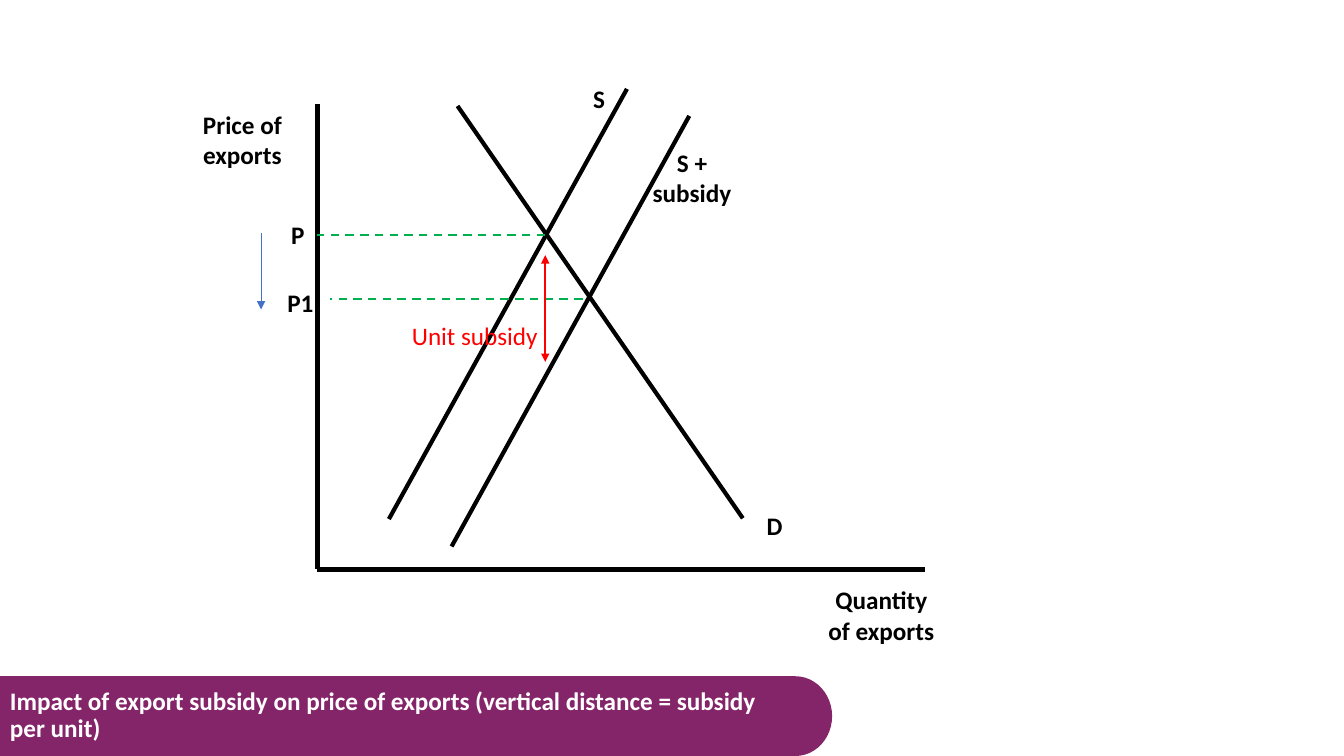
from lxml import etree
from pptx import Presentation
from pptx import util as u
from pptx.dml.color import RGBColor
from pptx.enum import dml, shapes, text
from pptx.oxml.ns import qn

BLACK = RGBColor(0x00, 0x00, 0x00)
WHITE = RGBColor(0xFF, 0xFF, 0xFF)
PURPLE = RGBColor(0x85, 0x25, 0x69)
GREEN = RGBColor(0x00, 0xB0, 0x50)
BLUE = RGBColor(0x44, 0x72, 0xC4)
RED = RGBColor(0xFF, 0x00, 0x00)

ORIGIN_X, ORIGIN_Y = 8, 14.35
BANNER_TOP, BANNER_HEIGHT = 17.04, 2.01
CENTER, LEFT = text.PP_ALIGN.CENTER, text.PP_ALIGN.LEFT


def add_line(page, start, end, color=BLACK, width=3, dashed=False, arrows=()):
    """Draw a straight line; arrows may hold "headEnd" and "tailEnd"."""
    points = [u.Cm(value) for value in (*start, *end)]
    line = page.shapes.add_connector(shapes.MSO_CONNECTOR.STRAIGHT, *points)
    line.line.color.rgb = color
    line.line.width = u.Pt(width)
    if dashed:
        line.line.dash_style = dml.MSO_LINE.DASH
    properties = line._element.spPr
    outline = properties.find(qn("a:ln"))
    for arrow in arrows:
        etree.SubElement(outline, qn(f"a:{arrow}"), type="triangle")
    etree.SubElement(properties, qn("a:effectLst"))


def add_label(page, words, left, top, width=3.18, height=1.02,
              color=BLACK, bold=True, align=CENTER):
    box = page.shapes.add_textbox(*map(u.Cm, (left, top, width, height)))
    box.text_frame.word_wrap = True
    para = box.text_frame.paragraphs[0]
    para.text = words
    para.alignment = align
    para.font.name = "Calibri"
    para.font.size = u.Pt(18)
    para.font.bold = bold
    para.font.color.rgb = color
    return box


def add_banner_part(page, kind, left, width):
    part = page.shapes.add_shape(
        kind, *map(u.Cm, (left, BANNER_TOP, width, BANNER_HEIGHT)))
    part.shadow.inherit = False
    part.fill.solid()
    part.fill.fore_color.rgb = PURPLE
    part.line.fill.background()
    return part


def add_banner(page, title):
    add_banner_part(page, shapes.MSO_SHAPE.RECTANGLE, 0, 17.5)
    rounded_end = add_banner_part(
        page, shapes.MSO_SHAPE.FLOWCHART_STORED_DATA, 15.42, 5.55)
    rounded_end.rotation = 180
    box = add_label(page, title, 0, BANNER_TOP, 19.99, BANNER_HEIGHT,
                    WHITE, align=LEFT)
    box.text_frame.vertical_anchor = text.MSO_ANCHOR.MIDDLE
    box.text_frame.paragraphs[0].line_spacing = 0.9


def main():
    deck = Presentation()
    deck.slide_width, deck.slide_height = u.Cm(33.87), u.Cm(19.05)
    page = deck.slides.add_slide(deck.slide_layouts[6])

    add_banner(page, "Impact of export subsidy on price of exports "
                     "(vertical distance = subsidy per unit)")

    # Axes
    add_line(page, (ORIGIN_X, 2.62), (ORIGIN_X, ORIGIN_Y))
    add_line(page, (ORIGIN_X, ORIGIN_Y), (23.32, ORIGIN_Y))
    add_label(page, "Price of exports", 4.52, 2.62, height=1.8)
    add_label(page, "Quantity of exports", 20.62, 14.61, height=1.8)

    # Demand and supply curves
    add_line(page, (11.53, 2.67), (18.72, 13.06))
    add_line(page, (15.8, 2.24), (9.8, 13.08))
    add_line(page, (17.37, 2.92), (11.38, 13.77))
    add_label(page, "D", 17.93, 12.73)
    add_label(page, "S", 13.51, 1.98)
    add_label(page, "S + subsidy", 15.85, 3.58, height=1.8)

    # Prices before and after the subsidy
    add_line(page, (13.74, 5.92), (ORIGIN_X, 5.92), GREEN, 1.5, dashed=True)
    add_line(page, (14.68, 7.54), (8.31, 7.54), GREEN, 1.5, dashed=True)
    add_label(page, "P", 7.09, 5.41, 4.75, align=LEFT)
    add_label(page, "P1", 6.99, 7.11, 4.75, align=LEFT)
    add_line(page, (6.58, 5.87), (6.58, 7.8), BLUE, 0.5, arrows=["tailEnd"])

    # Unit subsidy
    add_line(page, (13.74, 6.43), (13.74, 9.12), RED, 1.25,
             arrows=["headEnd", "tailEnd"])
    add_label(page, "Unit subsidy", 10.13, 7.95, 4.72,
              color=RED, bold=False, align=LEFT)

    deck.save("out.pptx")


if __name__ == "__main__":
    main()
